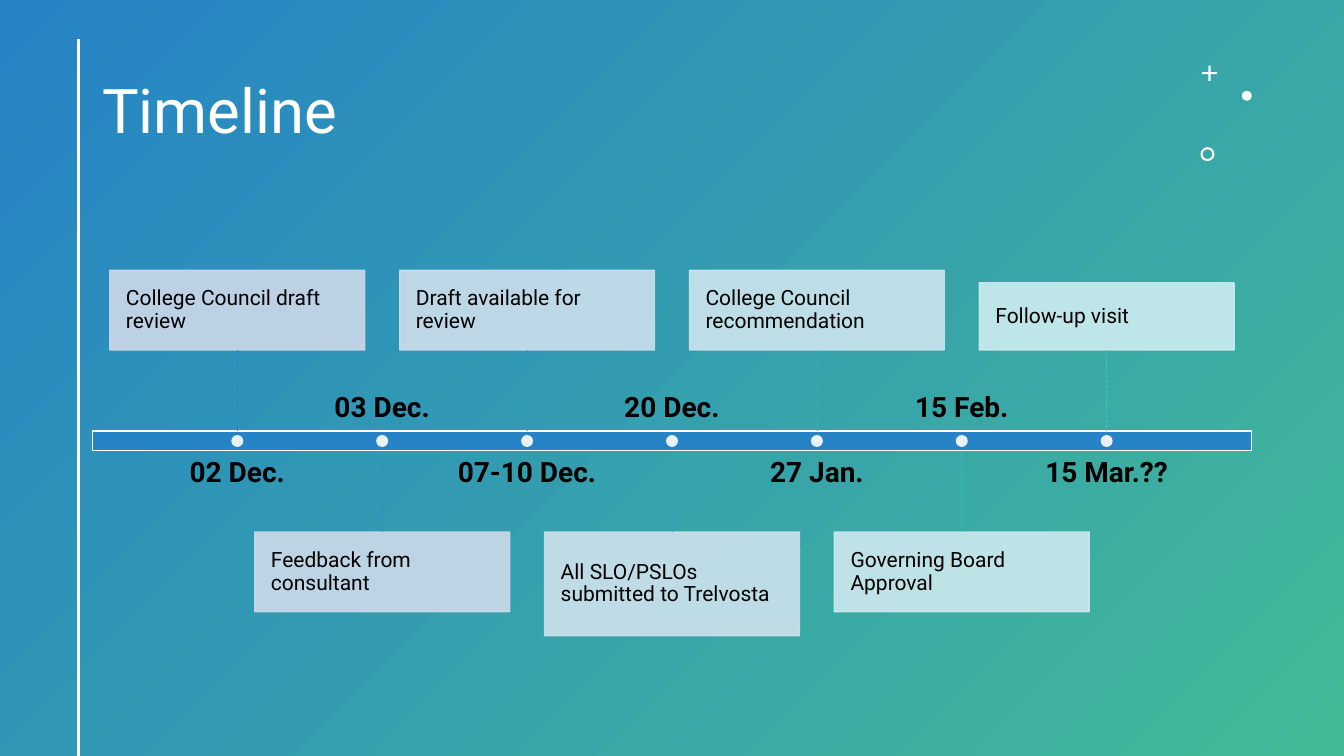
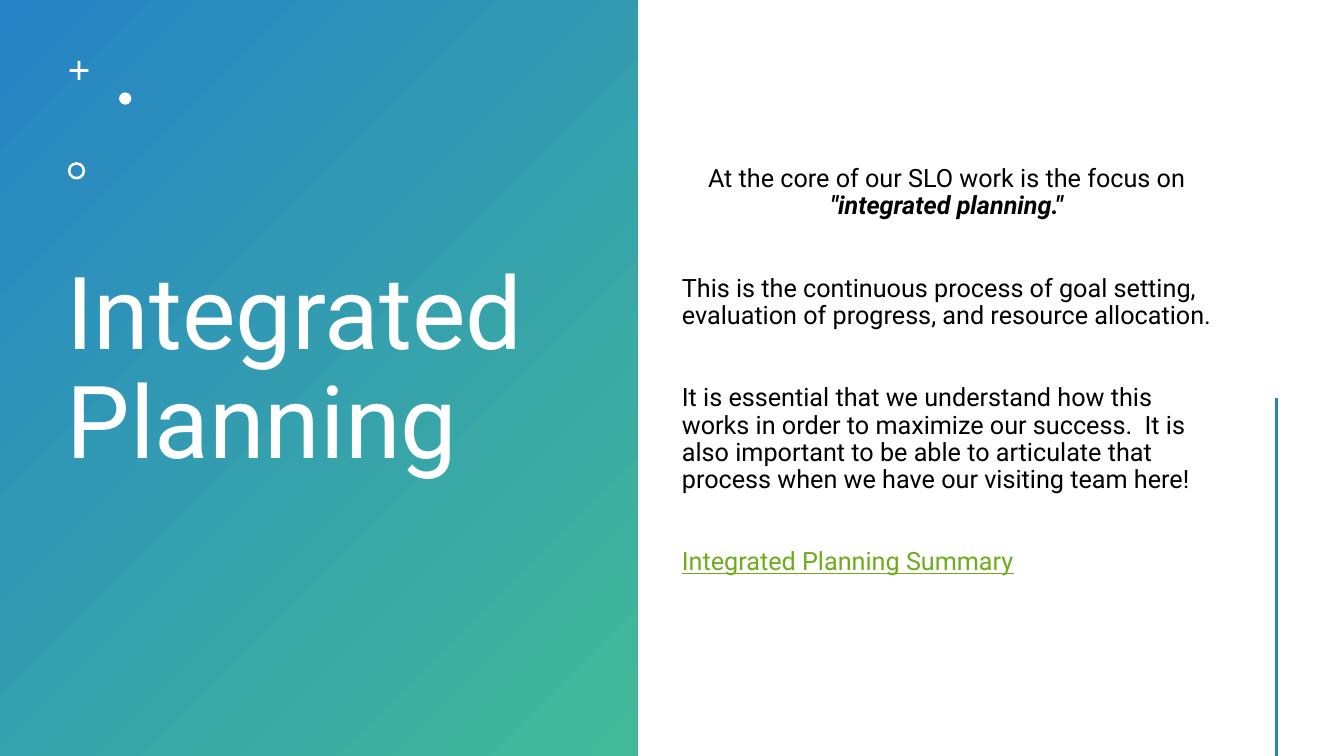
"""Build a timeline slide and an integrated planning slide."""
from dataclasses import dataclass

from lxml import etree
from pptx import Presentation
from pptx.dml.color import RGBColor
from pptx.enum import dml, shapes, text
from pptx.oxml import ns
from pptx.util import Pt

KIND = shapes.MSO_SHAPE
TOP, MID, LOW = text.MSO_ANCHOR.TOP, text.MSO_ANCHOR.MIDDLE, text.MSO_ANCHOR.BOTTOM
LEFT, MIDST = text.PP_ALIGN.LEFT, text.PP_ALIGN.CENTER


@dataclass(frozen=True)
class Theme:
    """Hold the colours, font and type sizes."""
    font: str = "Roboto"
    blue: str = "2683C6"
    green: str = "42BA97"
    white: str = "FFFFFF"
    ink: str = "000000"
    link: str = "6EAC1C"
    head: int = 44
    hero: int = 72
    date: int = 20
    body: int = 18
    note: int = 15
    lead: float = 0.9


T = Theme()
WIDE, HIGH = 960, 540

EVENTS = [
    ("02 Dec.", "College Council draft review", 57, "CDD9EA", "2683C6"),
    ("03 Dec.", "Feedback from consultant", 57, "CDDBEB", "268FC9"),
    ("07-10 Dec.", "Draft available for review", 57, "CDDFEC", "269BCC"),
    ("20 Dec.", "All SLO/PSLOs submitted to Trelvosta", 74, "CDE2ED", "27A7CE"),
    ("27 Jan.", "College Council recommendation", 57, "CDE5EE", "27B4D1"),
    ("15 Feb.", "Governing Board Approval", 57, "CDE9EF", "27C1D4"),
    ("15 Mar.??", "Follow-up visit", 48, "CDEDF0", "27CED7"),
]

STORY = [
    (MIDST, 10, [("At the core of our SLO work is the focus on ", {}),
                 ("\"integrated planning.\"", {"bold": True, "italic": True})]),
    (LEFT, 39.5, [("This is the continuous process of goal setting, evaluation of "
                   "progress, and resource allocation.", {})]),
    (LEFT, 39.5, [("It is essential that we understand how this works in order to "
                   "maximize our success.  It is also important to be able to "
                   "articulate that process when we have our visiting team here!",
                   {})]),
    (LEFT, 39.5, [("Integrated Planning Summary",
                   {"underline": True, "color": T.link})]),
]


def rgb(code):
    """Turn a hex code into a colour."""
    return RGBColor.from_string(code)


def points(box):
    """Turn a box of numbers into lengths."""
    return [Pt(n) for n in box]


def shape(slide, kind, box, fill=None, edge=None, alpha=None):
    """Draw a preset shape with flat fill, edge and opacity in percent."""
    item = slide.shapes.add_shape(kind, *points(box))
    item.shadow.inherit = False
    if fill:
        item.fill.solid()
        item.fill.fore_color.rgb = rgb(fill)
    if edge:
        item.line.color.rgb = rgb(edge)
        item.line.width = Pt(1)
    else:
        item.line.fill.background()
    if alpha:
        for tint in item.element.spPr.iter(ns.qn("a:srgbClr")):
            etree.SubElement(tint, ns.qn("a:alpha"), val=str(alpha * 1000))
    return item


def line(slide, start, end, color, width=2, dash=None):
    """Draw a straight line between two points."""
    item = slide.shapes.add_connector(
        shapes.MSO_CONNECTOR.STRAIGHT, *points((*start, *end)))
    item.line.color.rgb = rgb(color)
    item.line.width = Pt(width)
    if dash:
        item.line.dash_style = dash
    etree.SubElement(item.element.spPr, ns.qn("a:effectLst"))


def write(item, paras, size, color=T.ink, anchor=MID, pad=None):
    """Fill a shape with paragraphs of align, space before and runs."""
    frame = item.text_frame
    frame.word_wrap = True
    frame.vertical_anchor = anchor
    if pad is not None:
        frame.margin_left = frame.margin_right = Pt(pad)
        frame.margin_top = frame.margin_bottom = Pt(pad)
    for n, (align, space, runs) in enumerate(paras):
        para = frame.add_paragraph() if n else frame.paragraphs[0]
        para.alignment = align
        para.line_spacing = T.lead
        para.space_before = Pt(space)
        for words, look in runs:
            run = para.add_run()
            run.text = words
            font = run.font
            font.name, font.size = T.font, Pt(size)
            font.bold = look.get("bold", False)
            font.italic = look.get("italic", False)
            font.underline = look.get("underline", False)
            font.color.rgb = rgb(look.get("color", color))


def label(slide, box, *args, **kwargs):
    """Add a text box."""
    write(slide.shapes.add_textbox(*points(box)), *args, **kwargs)


def title(slide, box, words, size):
    """Add a white slide title."""
    label(slide, box, [(LEFT, 0, [(words, {})])], size, T.white)


def panel(slide, box):
    """Draw the diagonal blue to green ground."""
    item = shape(slide, KIND.RECTANGLE, box)
    item.fill.gradient()
    item.fill.gradient_angle = 315
    for stop, code, place in zip(item.fill.gradient_stops, (T.blue, T.green), (0, 1)):
        stop.color.rgb = rgb(code)
        stop.position = place


def marks(slide, left, top, size):
    """Draw the plus, dot and ring, scaled to the plus."""
    for kind, across, down, part, adjust in (
            (KIND.CROSS, 0, 0, 1, 0.43),
            (KIND.OVAL, 2.62, 1.66, 0.65, None),
            (KIND.DONUT, -0.09, 5.35, 0.92, 0.15)):
        item = shape(slide, kind, (left + across * size, top + down * size,
                                   part * size, part * size), T.white)
        if adjust:
            item.adjustments[0] = adjust


def event(slide, mid, axis, bar, above, data):
    """Place one card, its date and its dashed link around the axis."""
    date, note, tall, tint, tone = data
    wide, reach, gap, high, span = 182, 65, 12.6, 39, 166
    side = -1 if above else 1
    edge = axis + side * reach
    top = edge - tall if above else edge
    card = shape(slide, KIND.RECTANGLE, (mid - wide / 2, top, wide, tall),
                 tint, tint, 90)
    write(card, [(LEFT, 0, [(note, {})])], T.note, pad=11.5)
    line(slide, (mid, edge), (mid, axis + side * bar / 2), tone, 0.5,
         dml.MSO_LINE.DASH)
    spot = axis + gap if above else axis - gap - high
    label(slide, (mid - span / 2, spot, span, high),
          [(MIDST, 0, [(date, {"bold": True})])], T.date,
          anchor=TOP if above else LOW, pad=0)


def track(slide, box, events):
    """Draw the time bar with evenly spaced events."""
    left, top, wide, high = box
    step, axis, dot = wide / (len(events) + 1), top + high / 2, 8.6
    shape(slide, KIND.RECTANGLE, box, T.blue, T.white)
    for n, data in enumerate(events):
        mid = left + (n + 1) * step
        event(slide, mid, axis, high, n % 2 == 0, data)
        shape(slide, KIND.OVAL, (mid - dot / 2, axis - dot / 2, dot, dot),
              T.white, alpha=90)


def dates(slide):
    """Build the timeline slide."""
    panel(slide, (0, 0, WIDE, HIGH))
    title(slide, (66, 29, 772, 104), "Timeline", T.head)
    line(slide, (56, 28), (56, HIGH), T.white)
    marks(slide, 858.5, 46.8, 10.9)
    track(slide, (66, 308, 828, 14), EVENTS)


def plan(slide):
    """Build the integrated planning slide."""
    panel(slide, (0, 0, 455.5, HIGH))
    title(slide, (40.5, 30, 369, 470), "Integrated Planning", T.hero)
    marks(slide, 49.7, 43.6, 13.5)
    label(slide, (480, 30, 392.5, 470), STORY, T.body)
    line(slide, (912, 284), (912, HIGH), T.blue)


def main():
    """Build and save the deck."""
    deck = Presentation()
    deck.slide_width, deck.slide_height = Pt(WIDE), Pt(HIGH)
    for build in (dates, plan):
        build(deck.slides.add_slide(deck.slide_layouts[6]))
    deck.save("out.pptx")


if __name__ == "__main__":
    main()
